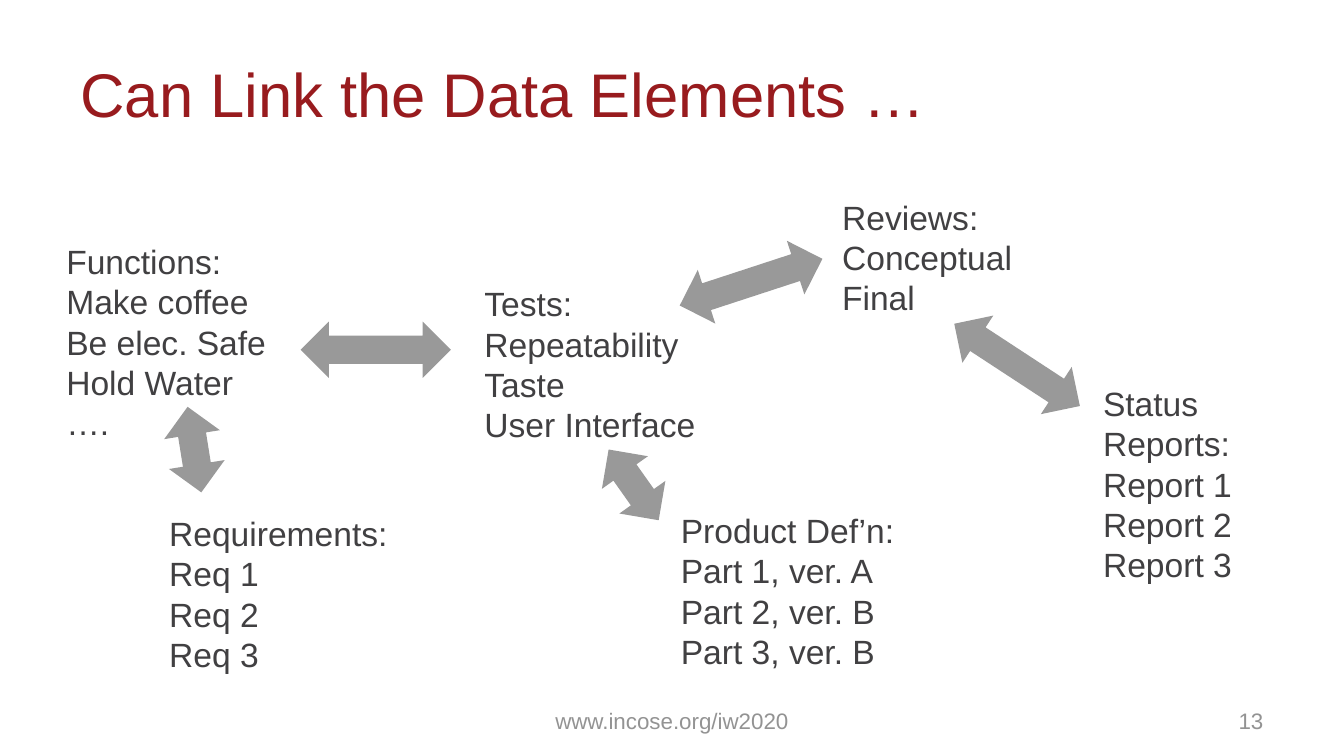
from pptx import Presentation
from pptx.dml.color import RGBColor
from pptx.enum.shapes import MSO_SHAPE
from pptx.enum.text import MSO_ANCHOR, PP_ALIGN
from pptx.util import Pt

LEFT, CENTER, RIGHT = PP_ALIGN.LEFT, PP_ALIGN.CENTER, PP_ALIGN.RIGHT
TOP, MIDDLE = MSO_ANCHOR.TOP, MSO_ANCHOR.MIDDLE
DOUBLE_ARROW = MSO_SHAPE.LEFT_RIGHT_ARROW

RED, DARK, GREY, ARROW_GREY = "981B1E", "414042", "939393", "999999"
FRAME = (9.36, 5.04)  # side and top insets of title and footer
BODY = (7.2, 3.6)
ARROW_HEIGHT = 40.3
LONG, SHORT = 107.3, 61.9

# left, top, width, height, lines
DATA_ELEMENTS = [
    (40.3, 168.5, 165.6, 152.6,
     ["Functions:", "Make coffee", "Be elec. Safe", "Hold Water", "…."]),
    (339.1, 198.7, 202.3, 123.8,
     ["Tests:", "Repeatability", "Taste", "User Interface"]),
    (594.7, 136.8, 145.4, 94.3, ["Reviews:", "Conceptual", "Final"]),
    (781.2, 270, 145.4, 152.6,
     ["Status Reports:", "Report 1", "Report 2", "Report 3"]),
    (113.8, 362.9, 170.6, 123.8, ["Requirements:", "Req 1", "Req 2", "Req 3"]),
    (479.5, 360.7, 170.6, 123.8,
     ["Product Def’n:", "Part 1, ver. A", "Part 2, ver. B", "Part 3, ver. B"]),
]

# left, top, length, rotation
LINKS = [
    (214.9, 229.7, LONG, 0),
    (108, 301, SHORT, 80.9),
    (483.1, 181.4, LONG, 341.9),
    (673.2, 240.5, LONG, 33.2),
    (421.9, 326.2, SHORT, 54.7),
]


def color(hex_value):
    return RGBColor.from_string(hex_value)


def set_attributes(target, values):
    for name, value in values.items():
        setattr(target, name, value)


def add_text(s, box, lines, size, hex_value, insets=BODY, anchor=TOP, align=LEFT):
    tf = s.shapes.add_textbox(*map(Pt, box)).text_frame
    side, top = map(Pt, insets)
    set_attributes(tf, {
        "word_wrap": True, "vertical_anchor": anchor,
        "margin_left": side, "margin_right": side,
        "margin_top": top, "margin_bottom": top,
    })
    for i, line in enumerate(lines):
        p = tf.paragraphs[0] if i == 0 else tf.add_paragraph()
        p.alignment = align
        r = p.add_run()
        r.text = line
        set_attributes(r.font, {"name": "Arial", "size": Pt(size)})
        r.font.color.rgb = color(hex_value)


def add_link(s, left, top, length, rotation):
    sp = s.shapes.add_shape(
        DOUBLE_ARROW, Pt(left), Pt(top), Pt(length), Pt(ARROW_HEIGHT))
    sp.rotation = rotation
    sp.shadow.inherit = False
    sp.fill.solid()
    sp.fill.fore_color.rgb = color(ARROW_GREY)
    sp.line.fill.background()


def main():
    prs = Presentation()
    set_attributes(prs, {"slide_width": Pt(960.5), "slide_height": Pt(540)})
    s = prs.slides.add_slide(prs.slide_layouts[6])

    add_text(s, (48.2, 21.6, 864.7, 90), ["Can Link the Data Elements …"],
             44, RED, FRAME, MIDDLE)
    add_text(s, (328.3, 500.4, 303.8, 28.8), ["www.incose.org/iw2020"],
             16, GREY, FRAME, MIDDLE, CENTER)
    add_text(s, (688.3, 500.4, 223.9, 28.8), ["13"],
             16, GREY, FRAME, MIDDLE, RIGHT)

    for *box, lines in DATA_ELEMENTS:
        add_text(s, box, lines, 24, DARK)
    for link in LINKS:
        add_link(s, *link)

    prs.save("out.pptx")


if __name__ == "__main__":
    main()
